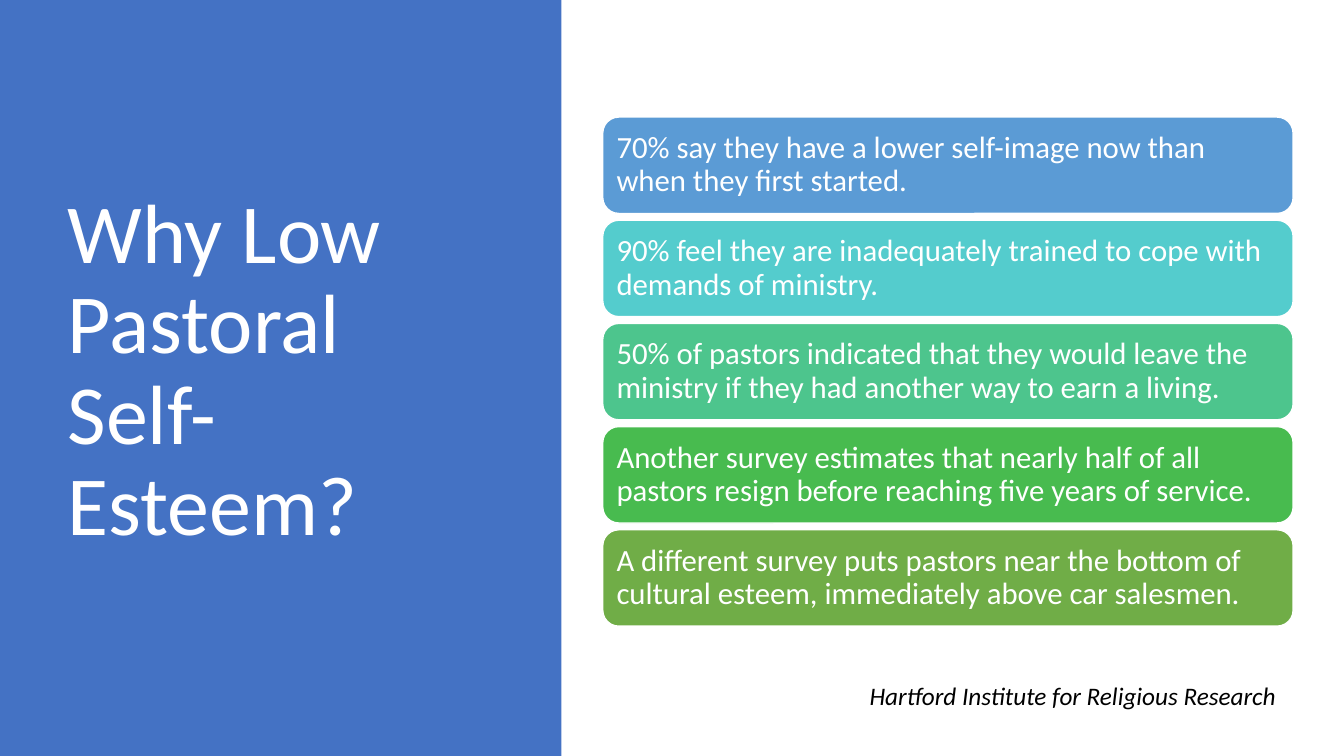
import pptx
import pptx.util
import pptx.dml.color
import pptx.enum.shapes
import pptx.enum.text

Cm = pptx.util.Cm
ALIGN = pptx.enum.text.PP_ALIGN
ANCHOR = pptx.enum.text.MSO_ANCHOR
SHAPE = pptx.enum.shapes.MSO_SHAPE

# Content
TITLE = "Why Low Pastoral Self-Esteem?"
FINDINGS = [
    ("70% say they have a lower self-image now than when they first started.", "blue"),
    ("90% feel they are inadequately trained to cope with demands of ministry.", "aqua"),
    ("50% of pastors indicated that they would leave the ministry "
     "if they had another way to earn a living.", "mint"),
    ("Another survey estimates that nearly half of all pastors "
     "resign before reaching five years of service.", "green"),
    ("A different survey puts pastors near the bottom of cultural esteem, "
     "immediately above car salesmen.", "olive"),
]
CREDIT = "Hartford Institute for Religious Research"
COLORS = {
    "panel": "4472C4", "white": "FFFFFF", "black": "000000",
    "blue": "5B9BD5", "aqua": "54CCCD", "mint": "4DC58D",
    "green": "48BB4F", "olive": "70AD47",
}

# Layout in centimetres
SLIDE_WIDTH, SLIDE_HEIGHT = 33.87, 19.05
PANEL_WIDTH = 14.15
BAR_LEFT, BAR_TOP, BAR_WIDTH, BAR_HEIGHT = 15.19, 2.95, 17.4, 2.43
BAR_PITCH = 2.6


def color(name):
    return pptx.dml.color.RGBColor.from_string(COLORS[name])


def write(box, text, size, ink="white", align=ALIGN.LEFT, anchor=ANCHOR.MIDDLE,
          spacing=0.9, italic=False, inset=None):
    frame = box.text_frame
    frame.word_wrap = True
    frame.auto_size = pptx.enum.text.MSO_AUTO_SIZE.NONE
    frame.vertical_anchor = anchor
    if inset is not None:
        frame.margin_left = frame.margin_right = Cm(inset)
        frame.margin_top = frame.margin_bottom = Cm(inset)
    para = frame.paragraphs[0]
    para.alignment = align
    para.line_spacing = spacing
    span = para.add_run()
    span.text = text
    span.font.name = "Calibri"
    span.font.size = pptx.util.Pt(size)
    span.font.italic = italic
    span.font.color.rgb = color(ink)


def add_block(page, kind, left, top, width, height, fill):
    block = page.shapes.add_shape(kind, Cm(left), Cm(top), Cm(width), Cm(height))
    block.shadow.inherit = False
    block.fill.solid()
    block.fill.fore_color.rgb = color(fill)
    block.line.fill.background()
    return block


def main():
    deck = pptx.Presentation()
    deck.slide_width, deck.slide_height = Cm(SLIDE_WIDTH), Cm(SLIDE_HEIGHT)
    page = deck.slides.add_slide(deck.slide_layouts[5])

    # Left panel, placed behind the title
    title = page.shapes.title
    panel = add_block(page, SHAPE.RECTANGLE, 0, 0, PANEL_WIDTH, SLIDE_HEIGHT, "panel")
    title.element.addprevious(panel.element)
    title.left, title.top = Cm(1.45), Cm(1.73)
    title.width, title.height = Cm(10.57), Cm(15.29)
    write(title, TITLE, 60)

    # Survey findings
    for row, (finding, fill) in enumerate(FINDINGS):
        bar = add_block(page, SHAPE.ROUNDED_RECTANGLE, BAR_LEFT,
                        BAR_TOP + row * BAR_PITCH, BAR_WIDTH, BAR_HEIGHT, fill)
        bar.line.color.rgb = color("white")
        bar.line.width = pptx.util.Pt(1)
        write(bar, finding, 22, inset=0.23)

    # Source of the figures
    credit = page.shapes.add_textbox(Cm(17.78), Cm(17.02), Cm(14.63), Cm(1.02))
    write(credit, CREDIT, 18, ink="black", align=ALIGN.RIGHT,
          anchor=ANCHOR.TOP, spacing=1.0, italic=True)

    deck.save("out.pptx")


if __name__ == "__main__":
    main()
